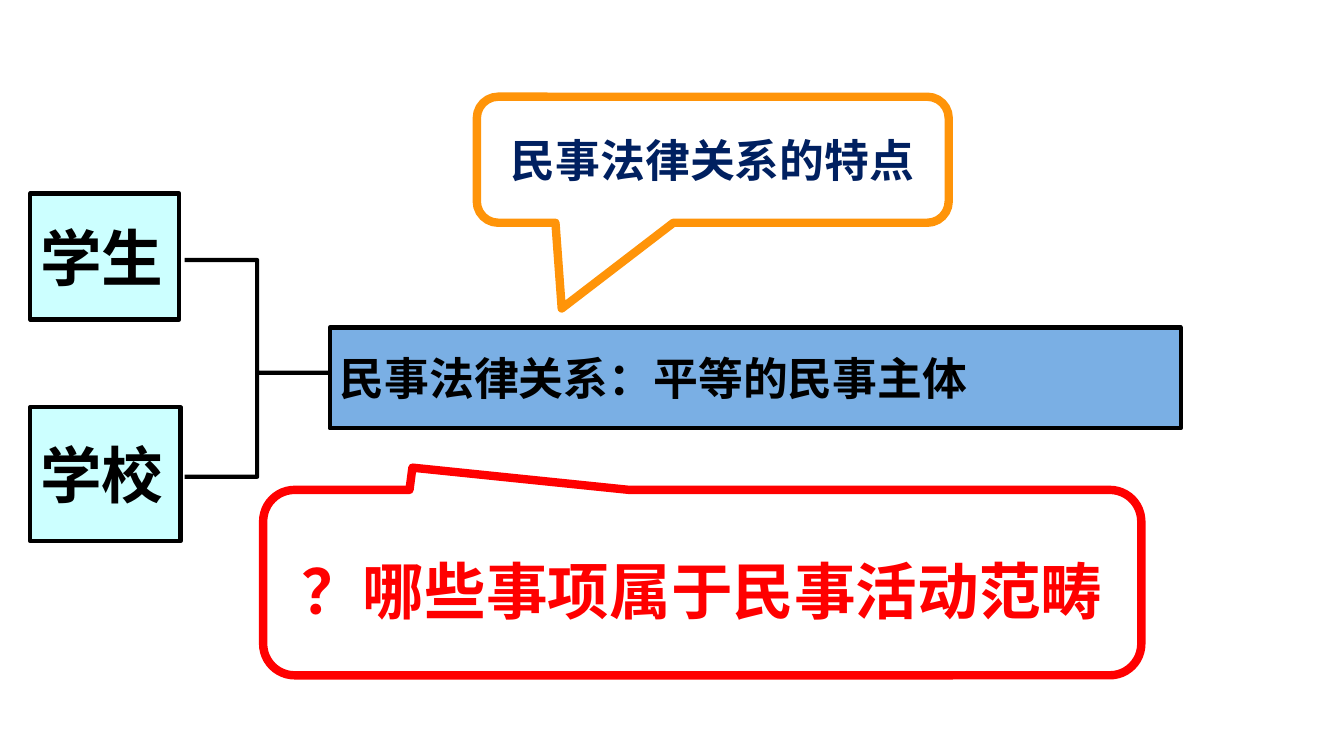
from lxml import etree
from pptx import Presentation
from pptx.dml.color import RGBColor
from pptx.enum.shapes import MSO_SHAPE
from pptx.enum.text import MSO_ANCHOR, PP_ALIGN
from pptx.oxml.ns import qn
from pptx.util import Inches, Pt

RECTANGLE = MSO_SHAPE.RECTANGLE
BRACE = MSO_SHAPE.RIGHT_BRACE
CALLOUT = MSO_SHAPE.ROUNDED_RECTANGULAR_CALLOUT
LEFT, CENTER = PP_ALIGN.LEFT, PP_ALIGN.CENTER
MIDDLE = MSO_ANCHOR.MIDDLE

FONT = "Noto Sans CJK SC"
BLACK, RED, ORANGE, NAVY = "000000", "FF0000", "FF9409", "002060"
CYAN, BLUE, WHITE = "CCFFFF", "0066CC", "FFFFFF"

# One column and one row are each a hundredth of the slide.
COLUMN = Inches(13.33) / 100
ROW = Inches(7.5) / 100


def color(value):
    return RGBColor.from_string(value)


def add_box(page, kind, left, top, width, height, *, line, weight=3,
            fill=None, opacity=None, adjust=()):
    """Add a preset shape placed in columns and rows; opacity is in percent."""
    box = page.shapes.add_shape(kind, round(left * COLUMN), round(top * ROW),
                                round(width * COLUMN), round(height * ROW))
    box.shadow.inherit = False
    box.line.color.rgb = color(line)
    box.line.width = Pt(weight)
    for index, value in enumerate(adjust):
        box.adjustments[index] = value
    if fill is None:
        box.fill.background()
    else:
        box.fill.solid()
        box.fill.fore_color.rgb = color(fill)
    if opacity is not None:
        shade = box.fill._xPr.find(qn("a:solidFill"))[0]
        etree.SubElement(shade, qn("a:alpha"), val=str(opacity * 1000))
    return box


def write(box, text, *, size, ink=BLACK, align=LEFT, inset_top=0.05):
    frame = box.text_frame
    frame.word_wrap = True
    frame.vertical_anchor = MIDDLE
    frame.margin_top = Inches(inset_top)
    para = frame.paragraphs[0]
    para.alignment = align
    span = para.add_run()
    span.text = text
    span.font.size = Pt(size)
    span.font.bold = True
    span.font.name = FONT
    span.font.color.rgb = color(ink)
    etree.SubElement(span.font._element, qn("a:ea"), typeface=FONT)


def main():
    deck = Presentation()
    deck.slide_width, deck.slide_height = Inches(13.33), Inches(7.5)
    page = deck.slides.add_slide(deck.slide_layouts[6])

    for party, top, width, height in (("学生", 25.6, 11.1, 16.67),
                                      ("学校", 53.87, 11.18, 17.73)):
        box = add_box(page, RECTANGLE, 2.25, top, width, height,
                      line=BLACK, fill=CYAN)
        write(box, party, size=44)

    add_box(page, BRACE, 13.73, 34.4, 10.8, 28.67, line=BLACK,
            adjust=(0, 0.52))

    relation = add_box(page, RECTANGLE, 24.53, 43.33, 63.32, 13.33,
                       line=BLACK, fill=BLUE, opacity=52)
    write(relation, "民事法律关系：平等的民事主体", size=32)

    feature = add_box(page, CALLOUT, 35.48, 12.8, 35.11, 16.67, line=ORANGE,
                      weight=6, adjust=(-0.32, 1.18, 0.17))
    write(feature, "民事法律关系的特点", size=32, ink=NAVY, align=CENTER)

    question = add_box(page, CALLOUT, 19.58, 64.8, 65.34, 24.53, line=RED,
                       weight=6, fill=WHITE, adjust=(-0.33, -0.62, 0.17))
    write(question, "？哪些事项属于民事活动范畴", size=44, ink=RED,
          align=CENTER, inset_top=0.2)

    deck.save("out.pptx")


if __name__ == "__main__":
    main()
